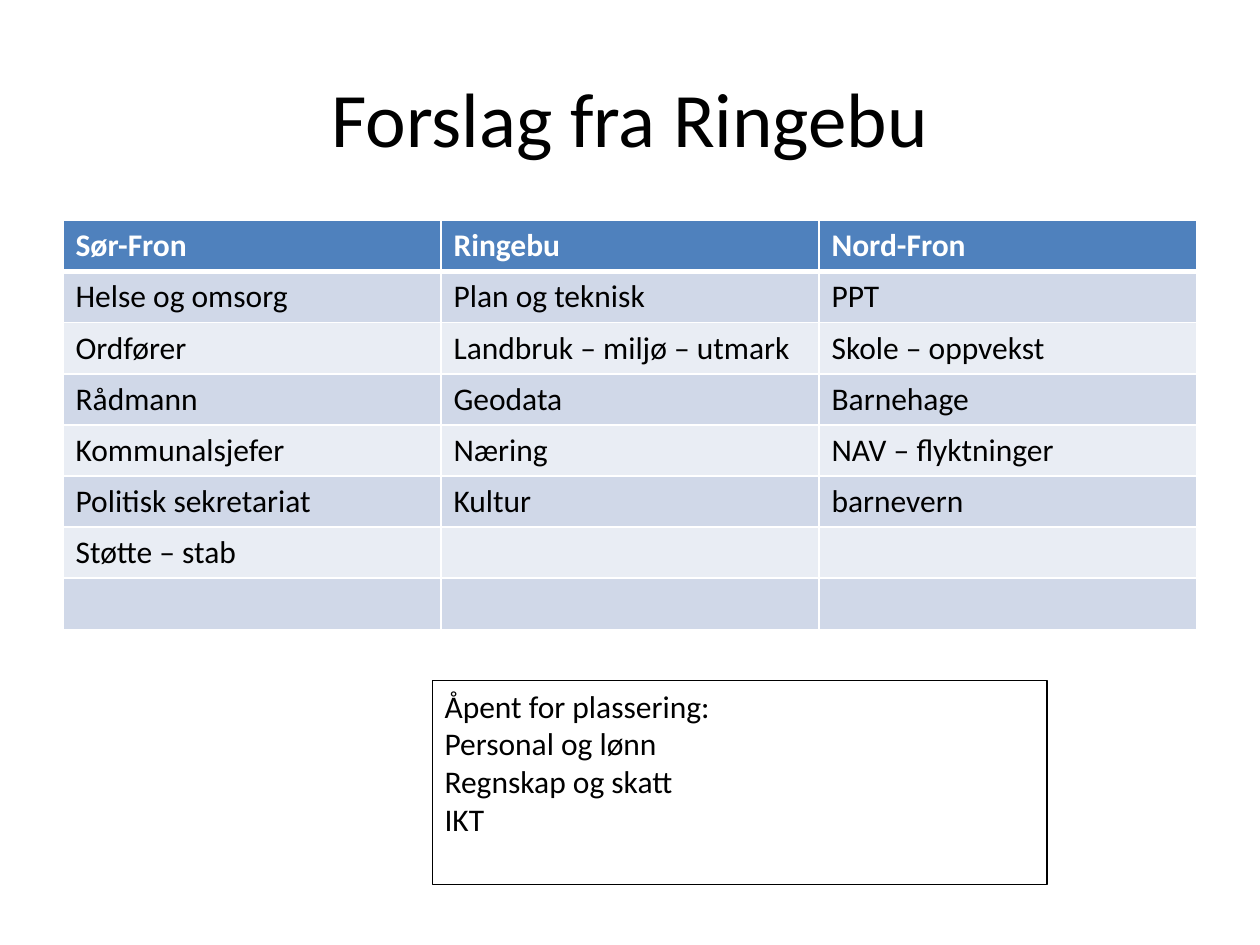
from lxml import etree
from pptx import Presentation
from pptx.dml.color import RGBColor
from pptx.enum.text import MSO_ANCHOR, MSO_AUTO_SIZE, PP_ALIGN
from pptx.oxml.ns import qn
from pptx.util import Inches, Pt

CENTER, LEFT = PP_ALIGN.CENTER, PP_ALIGN.LEFT
MIDDLE, TOP = MSO_ANCHOR.MIDDLE, MSO_ANCHOR.TOP
NO_AUTOSIZE = MSO_AUTO_SIZE.NONE

FONT = "Calibri"
COLORS = {
    "text": "000000",
    "white": "FFFFFF",
    "header": "4F81BD",
    "band_dark": "D0D8E8",
    "band_light": "E9EDF4",
}

HEADERS = ["Sør-Fron", "Ringebu", "Nord-Fron"]
ROWS = [
    ["Helse og omsorg", "Plan og teknisk", "PPT"],
    ["Ordfører", "Landbruk – miljø – utmark", "Skole – oppvekst"],
    ["Rådmann", "Geodata", "Barnehage"],
    ["Kommunalsjefer", "Næring", "NAV – flyktninger"],
    ["Politisk sekretariat", "Kultur", "barnevern"],
    ["Støtte – stab", "", ""],
    ["", "", ""],
]
OPEN_ITEMS = ["Åpent for plassering:", "Personal og lønn", "Regnskap og skatt", "IKT"]


def rgb(name):
    return RGBColor.from_string(COLORS[name])


def write(tf, lines, size=18, color="text", bold=False, align=LEFT):
    for i, line in enumerate(lines):
        p = tf.paragraphs[0] if i == 0 else tf.add_paragraph()
        p.alignment = align
        p.font.size = Pt(size)
        if line:
            r = p.add_run()
            r.text = line
            r.font.name = FONT
            r.font.size = Pt(size)
            r.font.bold = bold
            r.font.color.rgb = rgb(color)


def set_borders(cell, top=1, bottom=1):
    """Draw white cell borders; widths are in points."""
    tc_pr = cell._tc.get_or_add_tcPr()
    for side, width in (("L", 1), ("R", 1), ("T", top), ("B", bottom)):
        ln = etree.SubElement(tc_pr, qn(f"a:ln{side}"), w=str(Pt(width)))
        fill = etree.SubElement(ln, qn("a:solidFill"))
        etree.SubElement(fill, qn("a:srgbClr"), val=COLORS["white"])


def add_title(s, text):
    title = s.shapes.title
    title.left, title.top = Inches(0.5), Inches(0.3)
    title.width, title.height = Inches(9), Inches(1.25)
    title.text_frame.vertical_anchor = MIDDLE
    write(title.text_frame, [text], size=44, align=CENTER)


def add_plan_table(s):
    data = [HEADERS] + ROWS
    frame = s.shapes.add_table(len(data), len(HEADERS), Inches(0.5), Inches(1.75),
                               Inches(9), Inches(3.24))
    for i, row in enumerate(data):
        is_header = i == 0
        fill = "header" if is_header else "band_dark" if i % 2 else "band_light"
        for j, text in enumerate(row):
            cell = frame.table.cell(i, j)
            # Thick rule between the header and the body
            set_borders(cell, top=3 if i == 1 else 1, bottom=3 if is_header else 1)
            cell.fill.solid()
            cell.fill.fore_color.rgb = rgb(fill)
            write(cell.text_frame, [text], bold=is_header,
                  color="white" if is_header else "text")


def add_open_box(s):
    box = s.shapes.add_textbox(Inches(3.43), Inches(5.4), Inches(4.88), Inches(1.62))
    box.line.color.rgb = rgb("text")
    box.line.width = Pt(0.75)
    tf = box.text_frame
    tf.word_wrap = True
    tf.auto_size = NO_AUTOSIZE
    tf.vertical_anchor = TOP
    write(tf, OPEN_ITEMS)


def main():
    prs = Presentation()
    prs.slide_width, prs.slide_height = Inches(10), Inches(7.5)
    s = prs.slides.add_slide(prs.slide_layouts[5])  # title only
    add_title(s, "Forslag fra Ringebu")
    add_plan_table(s)
    add_open_box(s)
    prs.save("out.pptx")


if __name__ == "__main__":
    main()
